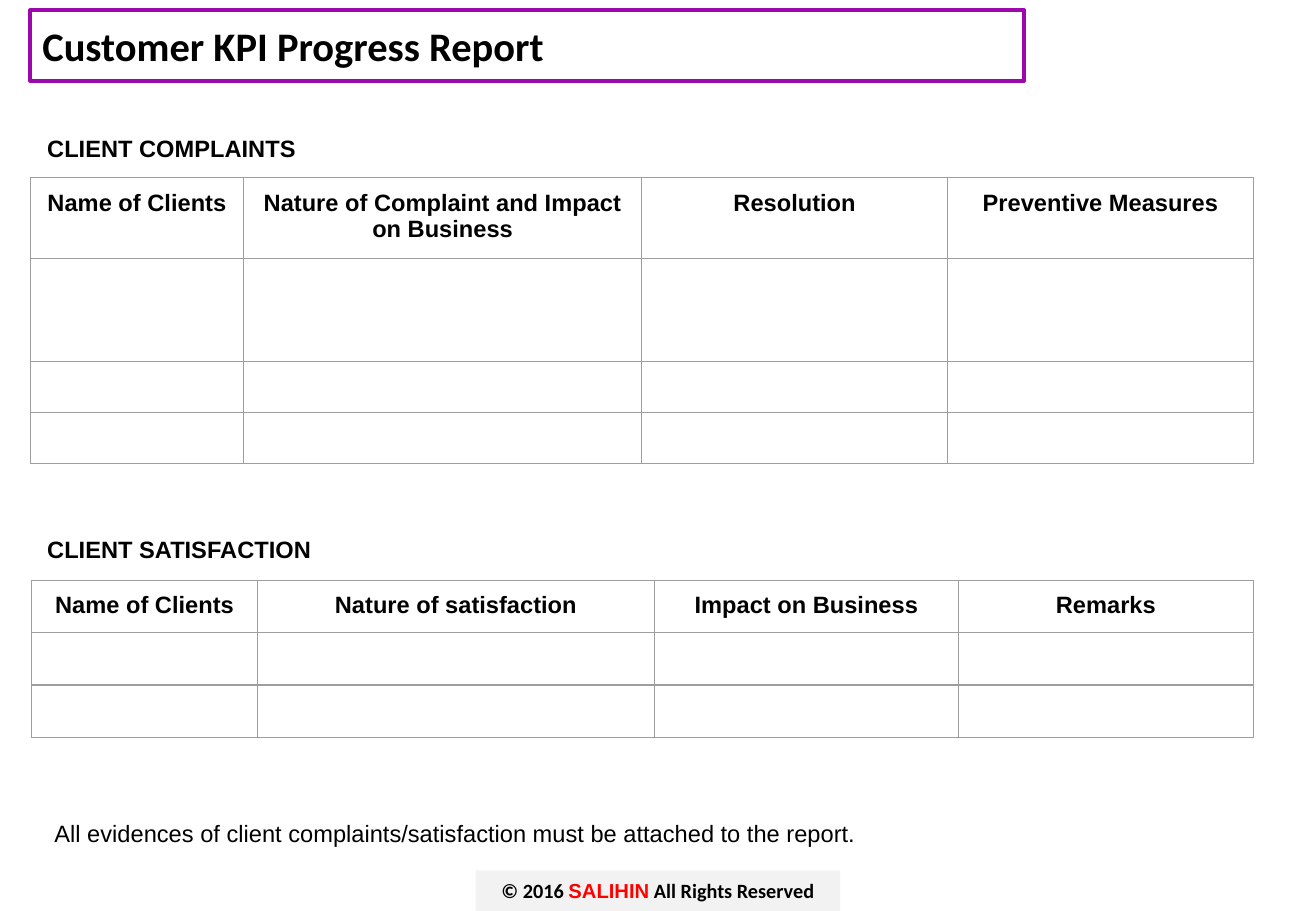
from lxml import etree
from pptx import Presentation
from pptx.dml.color import RGBColor
from pptx.enum.text import MSO_ANCHOR, PP_ALIGN
from pptx.oxml.ns import qn
from pptx.util import Pt

LEFT, CENTER = PP_ALIGN.LEFT, PP_ALIGN.CENTER
TOP, MIDDLE = MSO_ANCHOR.TOP, MSO_ANCHOR.MIDDLE
BLACK, RED, PURPLE = "000000", "FF0000", "9C08AC"
PALE_GRAY, BORDER_GRAY = "F2F2F2", "9E9E9E"
HEADER_INSET = 7.2

# Runs: text, font, size, colour, bold
TITLE = [("Customer KPI Progress Report", "Calibri", 24, BLACK, True)]
EVIDENCE_NOTE = [
    ("All evidences of client complaints/satisfaction must be attached to the report.",
     "Arial", 14, BLACK, False),
]
COPYRIGHT = [
    ("© 2016 ", "Calibri", 12, BLACK, True),
    ("SALIHIN", "Arial", 12, RED, True),
    (" All Rights Reserved", "Calibri", 12, BLACK, True),
]
SECTIONS = [
    {
        "heading": "CLIENT COMPLAINTS",
        "heading_top": 72,
        "table_at": (18, 105.2),
        "columns": [
            ("Name of Clients", 126.4),
            ("Nature of Complaint and Impact on Business", 236),
            ("Resolution", 181.3),
            ("Preventive Measures", 181.3),
        ],
        "row_heights": [45.6, 61, 30.2, 30.2],
    },
    {
        "heading": "CLIENT SATISFACTION",
        "heading_top": 309.6,
        "table_at": (18.6, 343.9),
        "columns": [
            ("Name of Clients", 134.2),
            ("Nature of satisfaction", 235),
            ("Impact on Business", 180.4),
            ("Remarks", 174.6),
        ],
        "row_heights": [30.2, 30.9, 31.2],
    },
]


def rgb(value):
    return RGBColor.from_string(value)


def add_runs(paragraph, runs, align):
    paragraph.alignment = align
    for text, font, size, color, bold in runs:
        run = paragraph.add_run()
        run.text = text
        run.font.name = font
        run.font.size = Pt(size)
        run.font.bold = bold
        run.font.color.rgb = rgb(color)


def add_text(slide, box, runs, align=LEFT, anchor=TOP, inset_y=7.2):
    shape = slide.shapes.add_textbox(*(Pt(v) for v in box))
    frame = shape.text_frame
    frame.word_wrap = True
    frame.vertical_anchor = anchor
    frame.margin_left = frame.margin_right = Pt(7.2)
    frame.margin_top = frame.margin_bottom = Pt(inset_y)
    add_runs(frame.paragraphs[0], runs, align)
    return shape


def add_borders(cell):
    properties = cell._tc.get_or_add_tcPr()
    for index, side in enumerate(("lnL", "lnR", "lnT", "lnB")):
        line = etree.Element(qn(f"a:{side}"), w=str(Pt(0.75)))
        fill = etree.SubElement(line, qn("a:solidFill"))
        etree.SubElement(fill, qn("a:srgbClr"), val=BORDER_GRAY)
        properties.insert(index, line)


def add_section(slide, section):
    heading = [(section["heading"], "Arial", 14, BLACK, True)]
    add_text(slide, (20.9, section["heading_top"], 361.4, 33), heading)

    columns, heights = section["columns"], section["row_heights"]
    left, top = section["table_at"]
    width = sum(column_width for _, column_width in columns)
    table = slide.shapes.add_table(
        len(heights), len(columns), Pt(left), Pt(top), Pt(width), Pt(sum(heights))
    ).table
    table.first_row = table.horz_banding = False
    for row, height in zip(table.rows, heights):
        row.height = Pt(height)
    for index, (label, column_width) in enumerate(columns):
        table.columns[index].width = Pt(column_width)
        header = table.cell(0, index)
        header.margin_left = header.margin_right = Pt(HEADER_INSET)
        header.margin_top = header.margin_bottom = Pt(HEADER_INSET)
        add_runs(header.text_frame.paragraphs[0],
                 [(label, "Arial", 14, BLACK, True)], CENTER)
    for cell in table.iter_cells():
        cell.fill.background()
        add_borders(cell)


def main():
    prs = Presentation()
    prs.slide_width, prs.slide_height = Pt(780), Pt(540)
    slide = prs.slides.add_slide(prs.slide_layouts[6])

    footer = add_text(slide, (282, 516, 216, 24), COPYRIGHT, CENTER, MIDDLE, 3.6)
    footer.fill.solid()
    footer.fill.fore_color.rgb = rgb(PALE_GRAY)

    title = add_text(slide, (18, 6, 589, 42), TITLE, LEFT, MIDDLE, 3.6)
    title.line.color.rgb = rgb(PURPLE)
    title.line.width = Pt(2.25)

    for section in SECTIONS:
        add_section(slide, section)
    add_text(slide, (25.2, 478.1, 609, 25.2), EVIDENCE_NOTE)

    prs.save("out.pptx")


if __name__ == "__main__":
    main()
